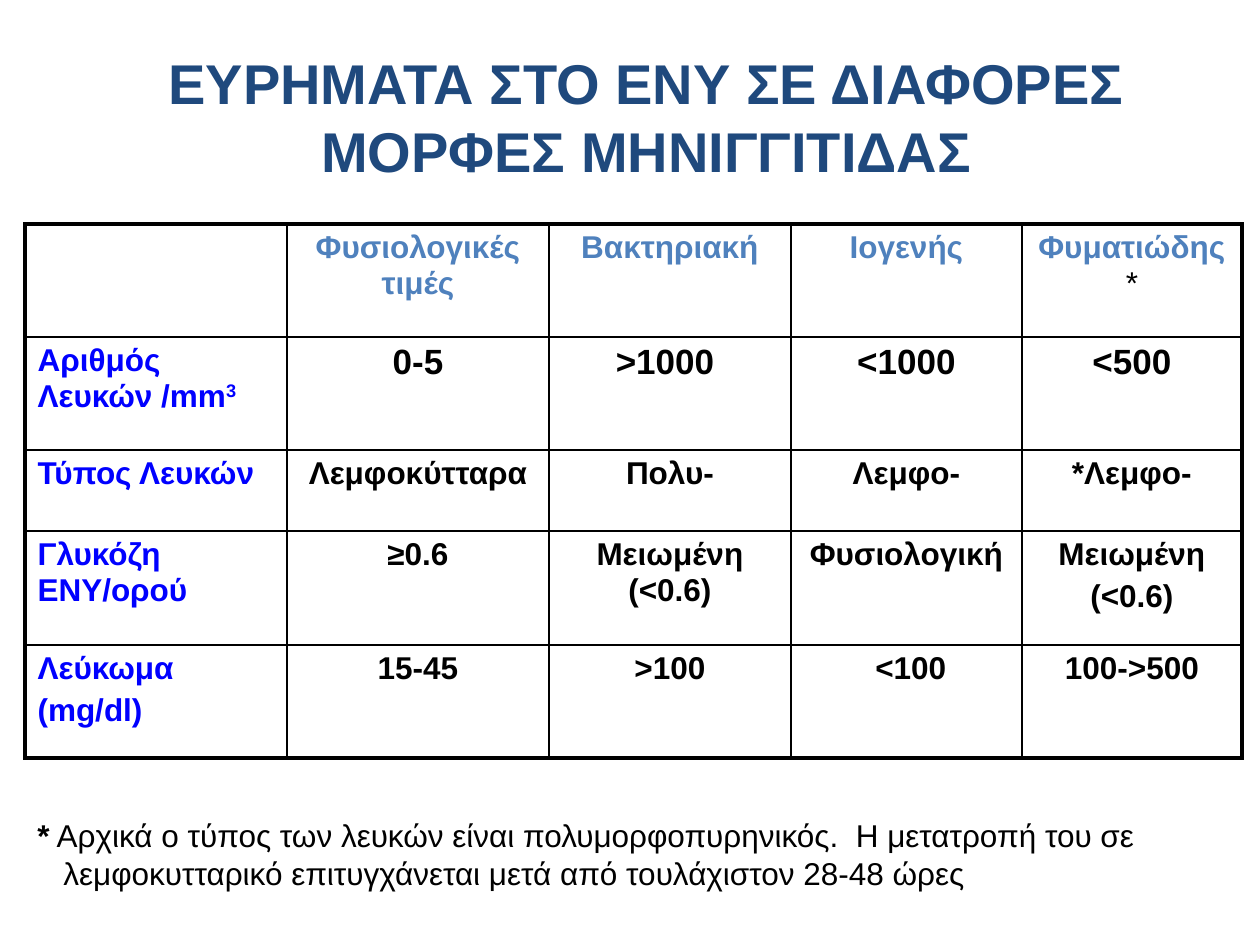
import pptx
import pptx.dml.color
import pptx.enum.text
import pptx.oxml
import pptx.oxml.ns
import pptx.util

RGBColor = pptx.dml.color.RGBColor
ALIGN = pptx.enum.text.PP_ALIGN
ANCHOR = pptx.enum.text.MSO_ANCHOR

PX = 914400 / 126
FONT = "Arial"
NAVY = RGBColor(0x1F, 0x49, 0x7D)
HEADER_BLUE = RGBColor(0x4F, 0x81, 0xBD)
LABEL_BLUE = RGBColor(0x00, 0x00, 0xFF)
BLACK = RGBColor(0x00, 0x00, 0x00)

COLUMN_WIDTHS = [262, 262, 242, 231, 220]
ROW_HEIGHTS = [113, 113, 81, 114, 113]

# A cell is a list of paragraphs; a paragraph is a list of (text, run format)
HEADERS = [
    [],
    [[("Φυσιολογικές τιμές", {})]],
    [[("Βακτηριακή", {})]],
    [[("Ιογενής", {})]],
    [[("Φυματιώδης", {}), ("*", {"color": BLACK, "bold": False})]],
]
LABELS = [
    [[("Αριθμός Λευκών /mm", {}), ("3", {"superscript": True})]],
    [[("Τύπος Λευκών", {})]],
    [[("Γλυκόζη ΕΝΥ/ορού", {})]],
    [[("Λεύκωμα", {})], [("(mg/dl)", {})]],
]
VALUES = [
    ["0-5", ">1000 ", "<1000", "<500"],
    ["Λεμφοκύτταρα", "Πολυ-", "Λεμφο-", "*Λεμφο-"],
    ["≥0.6", "Μειωμένη (<0.6)", "Φυσιολογική", "Μειωμένη\n(<0.6)"],
    ["15-45", ">100", " <100", "100->500"],
]


def px(length):
    return pptx.util.Emu(round(length * PX))


def plain(text):
    return [[(line, {})] for line in text.split("\n")]


def write_text(frame, paragraphs, size=18, color=BLACK, bold=False,
               align=ALIGN.LEFT, space_before=0):
    for index, runs in enumerate(paragraphs):
        paragraph = frame.paragraphs[0] if index == 0 else frame.add_paragraph()
        paragraph.alignment = align
        paragraph.space_before = pptx.util.Pt(space_before)
        for text, run_format in runs:
            run = paragraph.add_run()
            run.text = text
            run.font.name = FONT
            run.font.size = pptx.util.Pt(size)
            run.font.bold = run_format.get("bold", bold)
            run.font.color.rgb = run_format.get("color", color)
            if run_format.get("superscript"):
                run.font._element.set("baseline", "30000")


def add_text(slide, left, top, width, height, paragraphs,
             anchor=ANCHOR.TOP, **text_format):
    shape = slide.shapes.add_textbox(px(left), px(top), px(width), px(height))
    frame = shape.text_frame
    frame.word_wrap = True
    frame.vertical_anchor = anchor
    write_text(frame, paragraphs, **text_format)
    return frame


def set_borders(cell, widths):
    properties = cell._tc.get_or_add_tcPr()
    namespace = pptx.oxml.ns.nsdecls("a")
    for position, (side, width) in enumerate(widths.items()):
        line = pptx.oxml.parse_xml(
            f'<a:ln{side} {namespace} w="{pptx.util.Pt(width)}">'
            f'<a:solidFill><a:srgbClr val="{BLACK}"/></a:solidFill></a:ln{side}>')
        properties.insert(position, line)


def fill_cell(cell, row, column):
    """Header row and label column are coloured; the rest holds findings."""
    cell.fill.background()
    if row == 0:
        paragraphs, color = HEADERS[column], HEADER_BLUE
    elif column == 0:
        paragraphs, color = LABELS[row - 1], LABEL_BLUE
    else:
        paragraphs, color = plain(VALUES[row - 1][column - 1]), BLACK
    size = 20 if row == 1 and column > 0 else 18
    align = ALIGN.LEFT if column == 0 else ALIGN.CENTER
    write_text(cell.text_frame, paragraphs, size=size, color=color, bold=True,
               align=align, space_before=size * 0.2)


def add_findings_table(slide, left, top):
    rows, columns = len(ROW_HEIGHTS), len(COLUMN_WIDTHS)
    shape = slide.shapes.add_table(rows, columns, px(left), px(top),
                                   px(sum(COLUMN_WIDTHS)), px(sum(ROW_HEIGHTS)))
    table = shape.table
    table.first_row = False
    table.horz_banding = False
    for column, width in enumerate(COLUMN_WIDTHS):
        table.columns[column].width = px(width)
    for row, height in enumerate(ROW_HEIGHTS):
        table.rows[row].height = px(height)
        for column in range(columns):
            cell = table.cell(row, column)
            fill_cell(cell, row, column)
            # Thick outer frame, thin inner grid
            outer = {"L": column == 0, "R": column == columns - 1,
                     "T": row == 0, "B": row == rows - 1}
            set_borders(cell, {side: 2.25 if edge else 1
                               for side, edge in outer.items()})


def main():
    presentation = pptx.Presentation()
    presentation.slide_width = px(1260)
    presentation.slide_height = px(945)
    slide = presentation.slides.add_slide(presentation.slide_layouts[6])

    # Title
    add_text(slide, 53, 17, 1187, 198,
             plain("ΕΥΡΗΜΑΤΑ ΣΤΟ ΕΝΥ ΣΕ ΔΙΑΦΟΡΕΣ ΜΟΡΦΕΣ ΜΗΝΙΓΓΙΤΙΔΑΣ"),
             anchor=ANCHOR.MIDDLE, size=32, color=NAVY, bold=True,
             align=ALIGN.CENTER)

    # Findings by form of meningitis
    add_findings_table(slide, 25, 224)

    # Footnote, its second line indented
    footnote = add_text(slide, 25, 810, 1206, 127, [
        [("*", {"bold": True}),
         (" Αρχικά ο τύπος των λευκών είναι πολυμορφοπυρηνικός.  "
          "Η μετατροπή του σε", {})],
        [("λεμφοκυτταρικό επιτυγχάνεται μετά από τουλάχιστον 28-48 ώρες", {})],
    ])
    footnote.paragraphs[1]._p.get_or_add_pPr().set("marL", str(px(26)))

    presentation.save("out.pptx")


if __name__ == "__main__":
    main()
